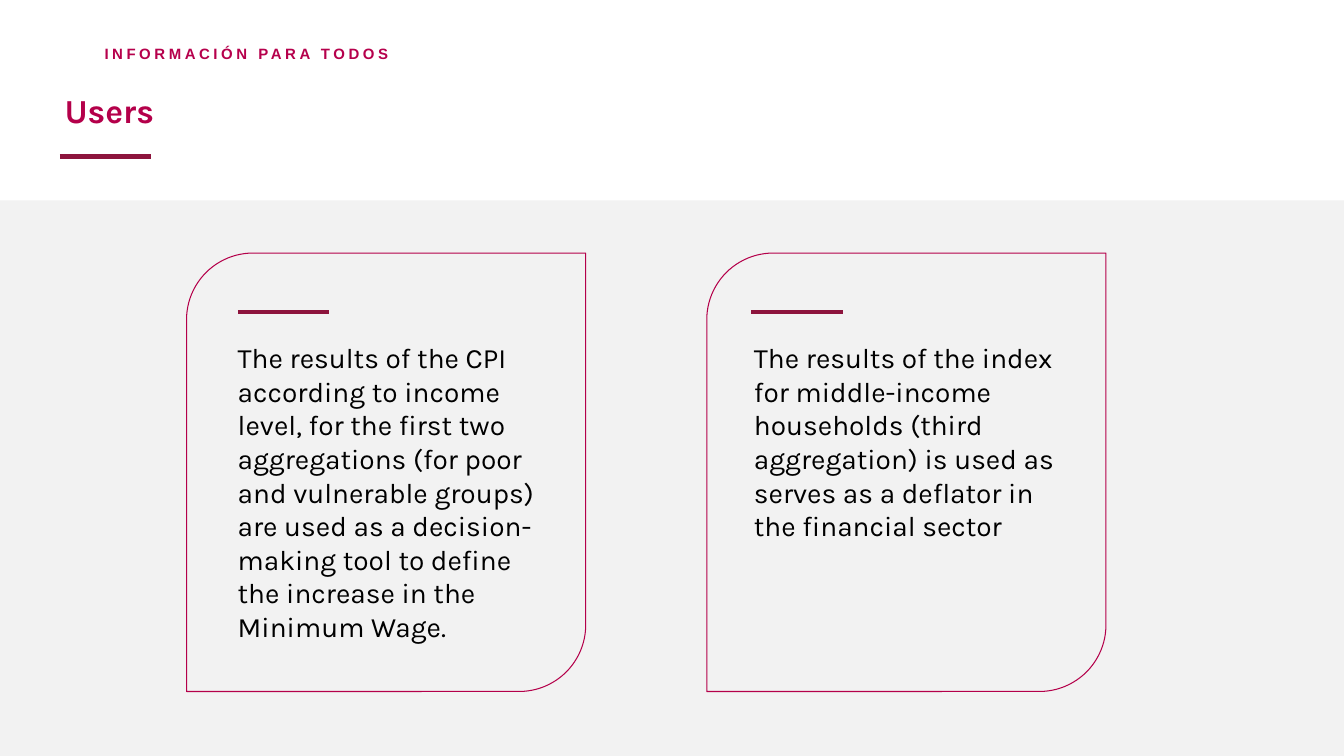
from dataclasses import dataclass
from lxml.etree import SubElement as Sub
from pptx import Presentation as Deck
from pptx.dml.color import RGBColor as Rgb
from pptx.enum.shapes import MSO_CONNECTOR as Link, MSO_SHAPE as Form
from pptx.enum.text import MSO_ANCHOR as Anchor, MSO_AUTO_SIZE as Fit, PP_ALIGN as Align
from pptx.oxml.ns import qn
from pptx.util import Inches, Pt


@dataclass(frozen=True)
class Theme:
    """Colours, fonts and type sizes of the slide."""
    brand: str = "B6004C"
    edge: str = "B4004A"
    bar: str = "8D143D"
    panel: str = "F2F2F2"
    ink: str = "000000"
    face: str = "Karla"
    label: str = "Arial"
    small: float = 10.7
    body: float = 20
    head: float = 24


T = Theme()
WIDE, HIGH = Inches(13.33), Inches(7.5)
CARDS = [
    (17.7, 16.95, "The results of the CPI according to income level, for the first two "
     "aggregations (for poor and vulnerable groups) are used as a decision-making tool "
     "to define the increase in the Minimum Wage."),
    (55.89, 55.36, "The results of the index for middle-income households (third "
     "aggregation) is used as serves as a deflator in the financial sector"),
]


def grid(x, y, w, h):
    """Turn percent columns and rows into slide lengths."""
    return [round(n * side / 100) for n, side in zip((x, y, w, h), (WIDE, HIGH) * 2)]


def style(frame, text, face, size, tint, bold=False):
    """Fill a text frame with one formatted paragraph."""
    frame.word_wrap = True
    frame.auto_size = Fit.SHAPE_TO_FIT_TEXT
    frame.vertical_anchor = Anchor.TOP
    frame.text = text
    line = frame.paragraphs[0]
    line.alignment = Align.LEFT
    font = line.runs[0].font
    font.name, font.size, font.bold = face, Pt(size), bold
    font.color.rgb = Rgb.from_string(tint)
    return line


def box(slide, form, area, fill=None, edge=None):
    """Draw a flat shape with an optional fill and outline."""
    shape = slide.shapes.add_shape(form, *grid(*area))
    shape.shadow.inherit = False
    if fill:
        shape.fill.solid()
        shape.fill.fore_color.rgb = Rgb.from_string(fill)
    else:
        shape.fill.background()
    if edge:
        shape.line.color.rgb = Rgb.from_string(edge)
        shape.line.width = Pt(0.75)
    else:
        shape.line.fill.background()


def rule(slide, x, y):
    """Draw a short thick accent line."""
    left, top, wide, _ = grid(x, y, 6.8, 0)
    line = slide.shapes.add_connector(Link.STRAIGHT, left, top, left + wide, top)
    line.line.color.rgb = Rgb.from_string(T.bar)
    line.line.width = Pt(3)
    Sub(line._element.spPr, qn("a:effectLst"))


def motto(slide):
    """Write the widely tracked label above the title."""
    frame = slide.shapes.add_textbox(*grid(7.78, 4.93, 30.6, 3.1)).text_frame
    frame.margin_left = frame.margin_right = frame.margin_bottom = 0
    frame.margin_top = Inches(0.02)
    line = style(frame, "INFORMACIÓN PARA TODOS", T.label, T.small, T.brand, True)
    line.line_spacing = 1.3
    line.runs[0].font._element.set("spc", "255")


def title(slide, text):
    """Place and format the slide title."""
    head = slide.shapes.title
    head.left, head.top, head.width, head.height = grid(4.05, 11.2, 65.34, 6.73)
    style(head.text_frame, text, T.face, T.head, T.edge, True)


def card(slide, x, bar, left, text):
    """Draw an outlined card with its accent line and text."""
    box(slide, Form.ROUND_2_DIAG_RECTANGLE, (x, 33.47, 29.7, 58), edge=T.edge)
    rule(slide, bar, 41.3)
    note = slide.shapes.add_textbox(*grid(left, 44.4, 24.3, 41.7))
    style(note.text_frame, text, T.face, T.body, T.ink)


def main():
    """Build and save the slide."""
    deck = Deck()
    deck.slide_width, deck.slide_height = WIDE, HIGH
    slide = deck.slides.add_slide(deck.slide_layouts[5])
    motto(slide)
    title(slide, "Users")
    box(slide, Form.RECTANGLE, (0, 26.5, 100, 73.5), fill=T.panel)
    rule(slide, 4.45, 20.7)
    for i, (bar, left, text) in enumerate(CARDS):
        card(slide, 13.88 + 38.71 * i, bar, left, text)
    deck.save("out.pptx")


if __name__ == "__main__":
    main()
